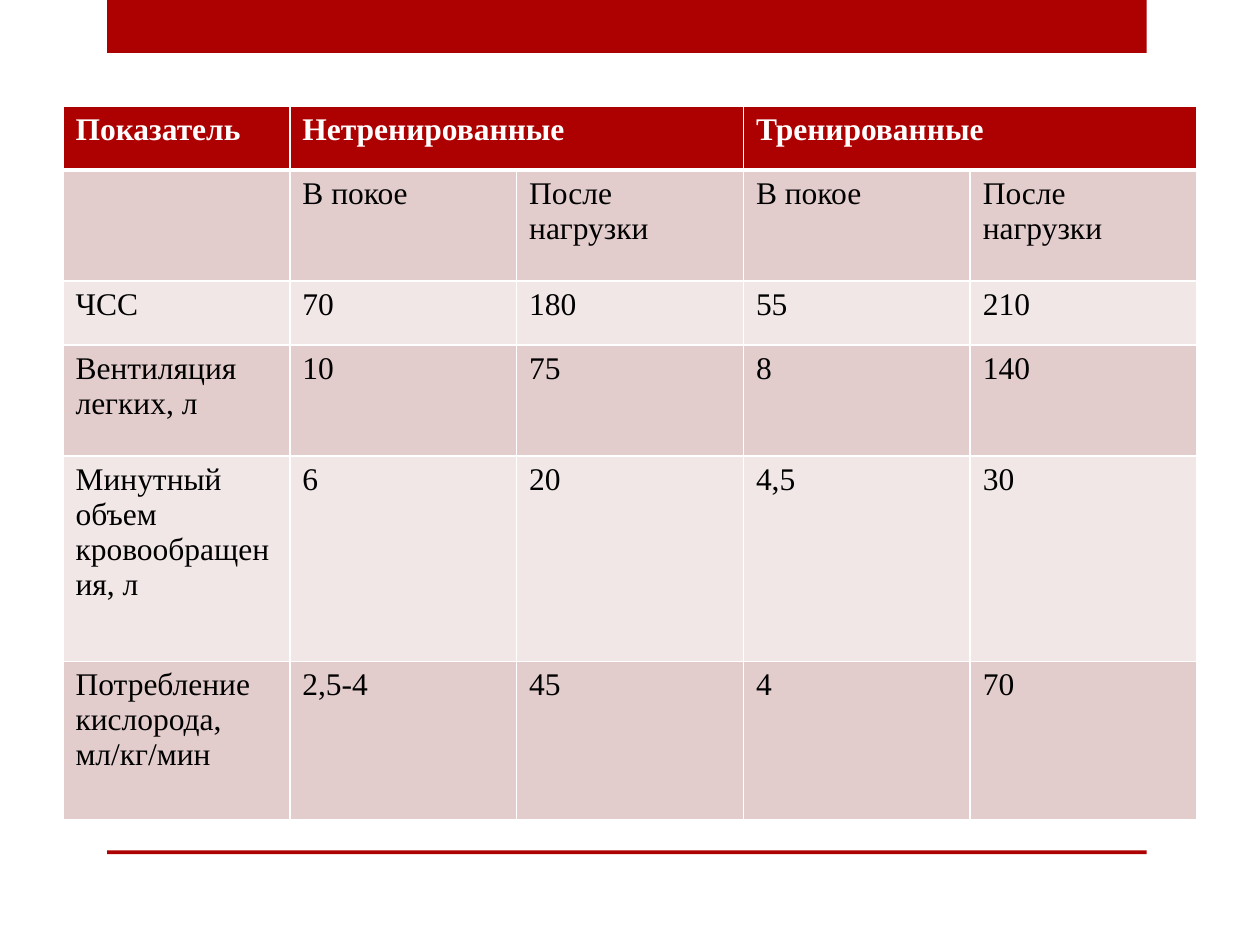
import dataclasses

import lxml.etree
import pptx
import pptx.dml.color
import pptx.enum.shapes
import pptx.oxml.ns
import pptx.util


@dataclasses.dataclass(frozen=True)
class Theme:
    font: str = "Times New Roman"
    size: int = 18
    red: str = "AD0101"
    white: str = "FFFFFF"
    black: str = "000000"
    bands: tuple = ("E3CCCC", "F1E7E7")
    thin: int = 1
    thick: int = 3


def paint(fill, color):
    fill.solid()
    fill.fore_color.rgb = pptx.dml.color.RGBColor.from_string(color)


def write(frame, text, *, font, size, color, bold=False):
    run = frame.paragraphs[0].add_run()
    run.text = text
    run.font.name = font
    run.font.size = pptx.util.Pt(size)
    run.font.bold = bold
    paint(run.font.fill, color)


def edge(cell, color, **widths):
    """Draw cell borders; widths are points keyed by side: L, R, T, B."""
    qn = pptx.oxml.ns.qn
    props = cell._tc.get_or_add_tcPr()
    for spot, (side, width) in enumerate(widths.items()):
        line = lxml.etree.Element(qn("a:ln" + side), w=str(pptx.util.Pt(width)))
        solid = lxml.etree.SubElement(line, qn("a:solidFill"))
        lxml.etree.SubElement(solid, qn("a:srgbClr"), val=color)
        props.insert(spot, line)


class Page:
    """Holds the theme and the current slide; lengths are shares of its size."""

    def __init__(self, deck, theme):
        self.deck = deck
        self.theme = theme
        self.slide = deck.slides.add_slide(deck.slide_layouts[6])

    def box(self, left, top, width, height):
        wide, high = self.deck.slide_width, self.deck.slide_height
        return [round(share * full) for share, full in
                zip((left, top, width, height), (wide, high, wide, high))]

    def bar(self, *place):
        kind = pptx.enum.shapes.MSO_SHAPE.RECTANGLE
        shape = self.slide.shapes.add_shape(kind, *self.box(*place))
        shape.shadow.inherit = False
        paint(shape.fill, self.theme.red)
        shape.line.fill.background()

    def table(self, data, heights, left, top, width):
        """Fill a table of equal columns; None joins a cell to the one before."""
        place = self.box(left, top, width, sum(heights))
        grid = self.slide.shapes.add_table(len(data), len(data[0]), *place).table
        for row, share in zip(grid.rows, heights):
            row.height = round(share * self.deck.slide_height)
        for r, line in enumerate(data):
            for c, text in enumerate(line):
                self.cell(grid.cell(r, c), r, text)
                if text is None:
                    grid.cell(r, c - 1).merge(grid.cell(r, c))

    def cell(self, cell, row, text):
        look = self.theme
        head = row == 0
        paint(cell.fill, look.red if head else look.bands[(row - 1) % 2])
        edge(cell, look.white, L=look.thin, R=look.thin,
             T=look.thick if row == 1 else look.thin,
             B=look.thick if head else look.thin)
        if text:
            write(cell.text_frame, text, font=look.font, size=look.size,
                  color=look.white if head else look.black, bold=head)


DATA = [
    ["Показатель", "Нетренированные", None, "Тренированные", None],
    ["", "В покое", "После нагрузки", "В покое", "После нагрузки"],
    ["ЧСС", "70", "180", "55", "210"],
    ["Вентиляция легких, л", "10", "75", "8", "140"],
    ["Минутный объем кровообращения, л", "6", "20", "4,5", "30"],
    ["Потребление кислорода, мл/кг/мин", "2,5-4", "45", "4", "70"],
]
HEIGHTS = [inch / 7.5 for inch in (0.51, 0.88, 0.51, 0.88, 1.63, 1.26)]


def main():
    deck = pptx.Presentation()
    deck.slide_width = pptx.util.Inches(10)
    deck.slide_height = pptx.util.Inches(7.5)
    page = Page(deck, Theme())
    page.bar(0.085, 0, 0.825, 0.42 / 7.5)
    page.bar(0.085, 0.9, 0.825, 0.03 / 7.5)
    page.table(DATA, HEIGHTS, left=0.05, top=0.84 / 7.5, width=0.9)
    deck.save("out.pptx")


if __name__ == "__main__":
    main()
